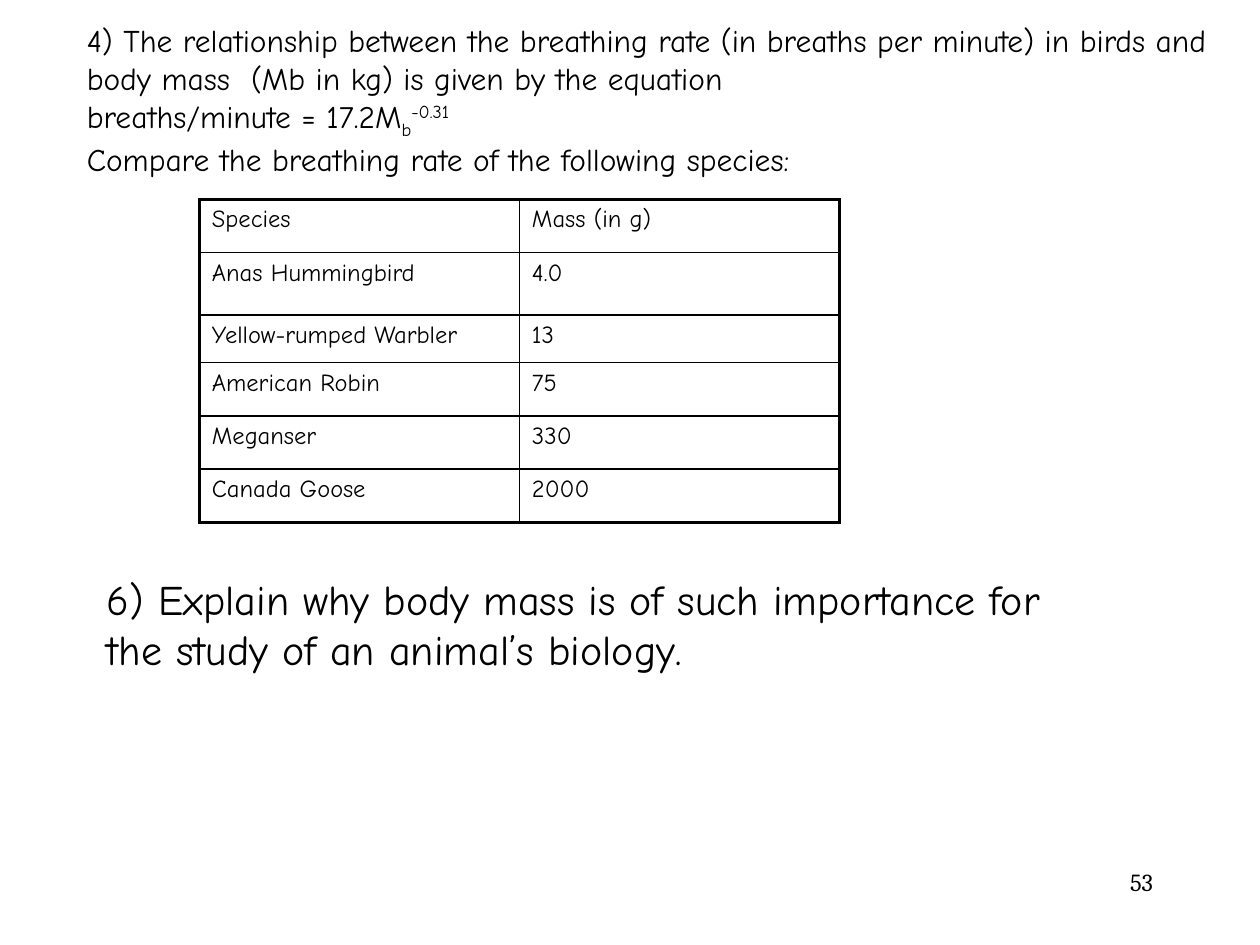
from dataclasses import dataclass

import lxml.etree
import pptx
import pptx.dml.color
import pptx.enum.text
import pptx.oxml.ns
import pptx.util

Pt = pptx.util.Pt
qn = pptx.oxml.ns.qn
Align = pptx.enum.text.PP_ALIGN


@dataclass(frozen=True)
class Theme:
    ink: str = "000000"
    paper: str = "FFFFFF"
    body_font: str = "Comic Neue"
    number_font: str = "Cambria"
    problem_size: float = 18
    question_size: float = 24
    small_size: float = 14
    outer_line: float = 2.25
    inner_line: float = 1


@dataclass(frozen=True)
class Run:
    text: str
    baseline: int = 0


@dataclass(frozen=True)
class Box:
    left: float
    top: float
    width: float
    height: float

    def lengths(self) -> tuple:
        return Pt(self.left), Pt(self.top), Pt(self.width), Pt(self.height)


@dataclass(frozen=True)
class Species:
    name: str
    mass: str
    height: float


THEME = Theme()


def write_text(frame, paragraphs: list[list[Run]], *, size: float,
               font: str = THEME.body_font, align=Align.LEFT,
               space_before: float = 0) -> None:
    frame.word_wrap = True
    for index, runs in enumerate(paragraphs):
        paragraph = frame.paragraphs[0] if index == 0 else frame.add_paragraph()
        paragraph.alignment = align
        paragraph.space_before = Pt(space_before)
        for part in runs:
            run = paragraph.add_run()
            run.text = part.text
            run.font.name = font
            run.font.size = Pt(size)
            run.font.bold = False
            run.font.color.rgb = pptx.dml.color.RGBColor.from_string(THEME.ink)
            if part.baseline:
                run.font._element.set("baseline", str(part.baseline * 1000))


def add_text(slide, box: Box, paragraphs: list[list[Run]], **text_format) -> None:
    frame = slide.shapes.add_textbox(*box.lengths()).text_frame
    write_text(frame, paragraphs, **text_format)


def draw_border(cell, side: str, width: float) -> None:
    properties = cell._tc.get_or_add_tcPr()
    line = lxml.etree.SubElement(properties, qn(f"a:ln{side}"), w=str(Pt(width)))
    fill = lxml.etree.SubElement(line, qn("a:solidFill"))
    lxml.etree.SubElement(fill, qn("a:srgbClr"), val=THEME.ink)


def add_species_table(slide, left: float, top: float, column_width: float,
                      rows: list[Species]) -> None:
    box = Box(left, top, 2 * column_width, sum(row.height for row in rows))
    table = slide.shapes.add_table(len(rows), 2, *box.lengths()).table
    table.first_row = table.horz_banding = False
    for column in table.columns:
        column.width = Pt(column_width)
    for row_index, species in enumerate(rows):
        table.rows[row_index].height = Pt(species.height)
        for column_index, value in enumerate((species.name, species.mass)):
            cell = table.cell(row_index, column_index)
            on_edge = {
                "L": column_index == 0,
                "R": column_index == 1,
                "T": row_index == 0,
                "B": row_index == len(rows) - 1,
            }
            for side, outer in on_edge.items():
                draw_border(cell, side, THEME.outer_line if outer else THEME.inner_line)
            cell.fill.solid()
            cell.fill.fore_color.rgb = pptx.dml.color.RGBColor.from_string(THEME.paper)
            write_text(cell.text_frame, [[Run(value)]], size=THEME.small_size,
                       space_before=0.2 * THEME.small_size)


def main() -> None:
    deck = pptx.Presentation()
    deck.slide_width, deck.slide_height = Pt(720), Pt(540)
    slide = deck.slides.add_slide(deck.slide_layouts[6])

    breathing_problem = [
        [Run("4) The relationship between the breathing rate (in breaths per minute) "
             "in birds and body mass  (Mb in kg) is given by the equation")],
        [Run("breaths/minute = 17.2M"), Run("b", -25), Run("-0.31", 30)],
        [Run("Compare the breathing rate of the following species:")],
    ]
    add_text(slide, Box(42.5, 8.6, 677.5, 122.4), breathing_problem,
             size=THEME.problem_size)

    add_species_table(slide, 113.9, 114, 182.9, [
        Species("Species", "Mass (in g)", 30.4),
        Species("Anas Hummingbird", "4.0", 35.5),
        Species("Yellow-rumped Warbler", "13", 27.4),
        Species("American Robin", "75", 30.4),
        Species("Meganser", "330", 30.4),
        Species("Canada Goose", "2000", 30.4),
    ])

    mass_question = [[Run("6) Explain why body mass is of such importance for "
                          "the study of an animal’s biology.")]]
    add_text(slide, Box(54, 324, 563.8, 65.5), mass_question, size=THEME.question_size)

    add_text(slide, Box(516, 492, 150, 36), [[Run("53")]], size=THEME.small_size,
             font=THEME.number_font, align=Align.RIGHT)
    deck.save("out.pptx")


if __name__ == "__main__":
    main()
